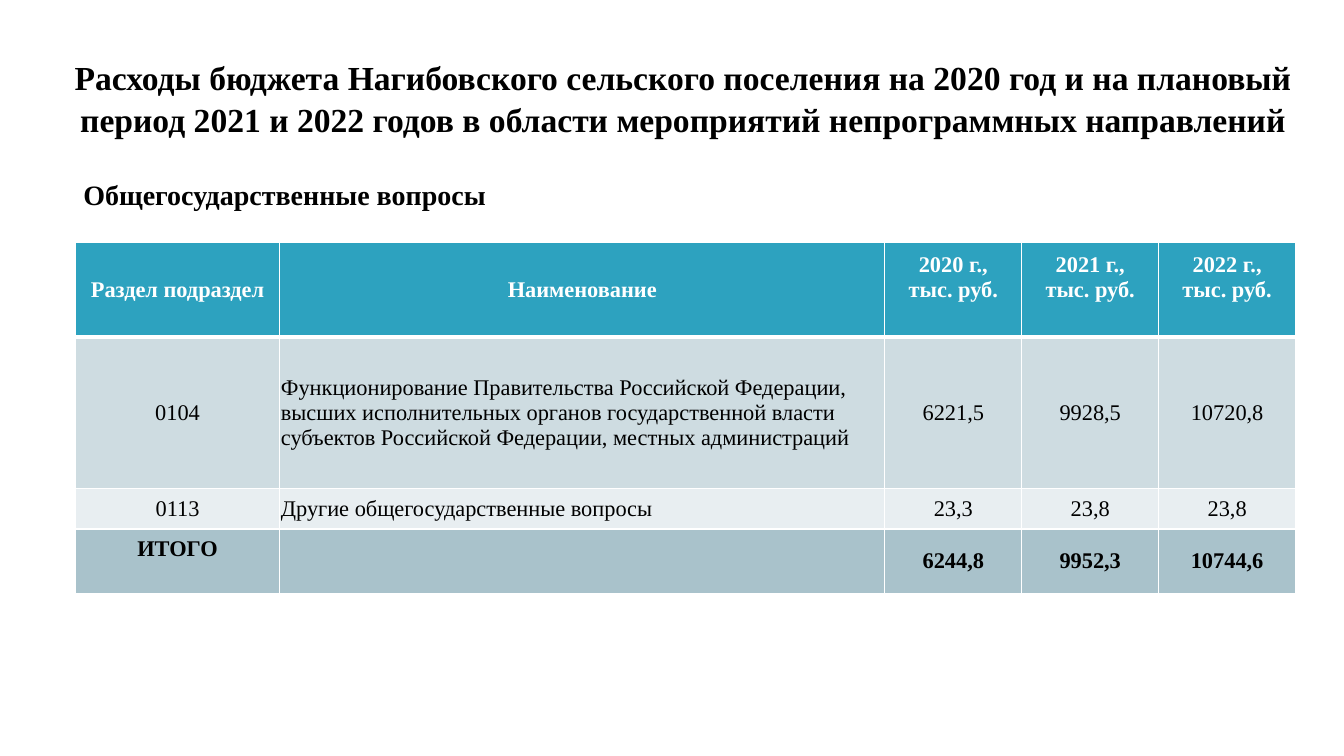
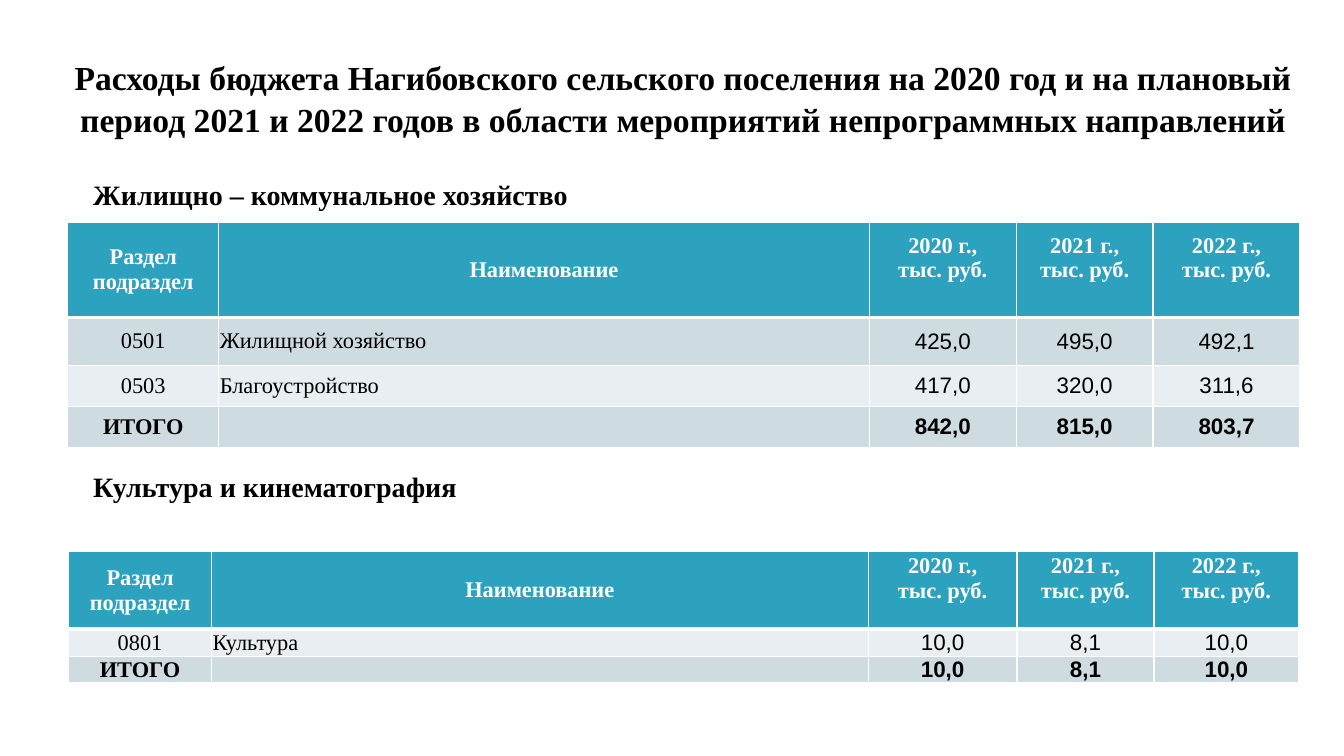
from dataclasses import dataclass

from lxml import etree
from pptx import Presentation
from pptx.dml.color import RGBColor
from pptx.enum.text import MSO_ANCHOR, PP_ALIGN
from pptx.oxml.ns import qn
from pptx.util import Cm, Pt

CENTER, LEFT = PP_ALIGN.CENTER, PP_ALIGN.LEFT
MIDDLE = MSO_ANCHOR.MIDDLE
TITLE_ONLY = 5


@dataclass(frozen=True)
class Theme:
    text: str = "000000"
    white: str = "FFFFFF"
    header: str = "2DA2BF"
    light: str = "E8EEF1"
    medium: str = "CEDCE1"
    dark: str = "A9C2CB"
    serif: str = "Times New Roman"
    sans: str = "Arial"
    title_size: int = 24
    heading_size: int = 20
    table_size: int = 16
    thin: int = 1
    thick: int = 3


THEME = Theme()

TITLE = ("Расходы бюджета Нагибовского сельского поселения на 2020 год и на плановый "
         "период 2021 и 2022 годов в области мероприятий непрограммных направлений")
HEADER = ["Раздел подраздел", "Наименование"] + [
    f"{year} г.,\nтыс. руб." for year in (2020, 2021, 2022)]
TOTAL = "ИТОГО"
LINE_GAP = 0.6  # raises a label above the middle of its cell

# Lengths are in centimetres; each heading is (text, left, top).
SLIDES = [
    [
        {
            "heading": ("Общегосударственные вопросы", 1.85, 4.35),
            "position": (1.9, 6.1),
            "columns": [5.15, 15.25, 3.45, 3.45, 3.45],
            "heights": [2.4, 3.8, 1.03, 1.62],
            "fills": [THEME.medium, THEME.light, THEME.dark],
            "number_font": THEME.serif,
            "total_gap": LINE_GAP,
            "rows": [
                ["0104", "Функционирование Правительства Российской Федерации, высших "
                 "исполнительных органов государственной власти субъектов Российской "
                 "Федерации, местных администраций", "6221,5", "9928,5", "10720,8"],
                ["0113", "Другие общегосударственные вопросы", "23,3", "23,8", "23,8"],
                [TOTAL, "", "6244,8", "9952,3", "10744,6"],
            ],
        },
    ],
    [
        {
            "heading": ("Жилищно – коммунальное хозяйство", 2.1, 4.35),
            "position": (1.71, 5.6),
            "columns": [3.8, 16.4, 3.7, 3.45, 3.7],
            "heights": [2.4, 1.2, 1.04, 1.04],
            "fills": [THEME.medium, THEME.light, THEME.medium],
            "number_font": THEME.sans,
            "total_gap": 0,
            "rows": [
                ["0501", "Жилищной хозяйство", "425,0", "495,0", "492,1"],
                ["0503", "Благоустройство", "417,0", "320,0", "311,6"],
                [TOTAL, "", "842,0", "815,0", "803,7"],
            ],
        },
        {
            "heading": ("Культура и кинематография", 2.1, 11.7),
            "position": (1.73, 13.9),
            "columns": [3.6, 16.55, 3.75, 3.45, 3.65],
            "heights": [1.9, 0.65, 0.65],
            "fills": [THEME.light, THEME.medium],
            "number_font": THEME.sans,
            "total_gap": 0,
            "rows": [
                ["0801", "Культура", "10,0", "8,1", "10,0"],
                [TOTAL, "", "10,0", "8,1", "10,0"],
            ],
        },
    ],
]


def write(text_frame, text, size, font=THEME.serif, color=THEME.text, bold=True,
          alignment=LEFT):
    text_frame.text = text
    for paragraph in text_frame.paragraphs:
        paragraph.alignment = alignment
        for run in paragraph.runs:
            run.font.name = font
            run.font.size = Pt(size)
            run.font.bold = bold
            run.font.color.rgb = RGBColor.from_string(color)
        if not paragraph.runs:
            etree.SubElement(paragraph._p, qn("a:endParaRPr"), sz=str(size * 100))


def set_borders(cell, top, bottom):
    """Draw white cell borders; the side borders are thin."""
    properties = cell._tc.get_or_add_tcPr()
    widths = {"lnL": THEME.thin, "lnR": THEME.thin, "lnT": top, "lnB": bottom}
    for index, (tag, width) in enumerate(widths.items()):
        line = etree.Element(qn(f"a:{tag}"), w=str(Pt(width)))
        fill = etree.SubElement(line, qn("a:solidFill"))
        etree.SubElement(fill, qn("a:srgbClr"), val=THEME.white)
        properties.insert(index, line)


def add_titled_slide(presentation):
    slide = presentation.slides.add_slide(presentation.slide_layouts[TITLE_ONLY])
    title = slide.shapes.title
    title.left, title.top, title.width, title.height = Cm(1.12), Cm(1.27), Cm(32.18), Cm(2.34)
    title.text_frame.vertical_anchor = MIDDLE
    write(title.text_frame, TITLE, THEME.title_size, alignment=CENTER)
    title.text_frame.paragraphs[0].line_spacing = 1.06
    return slide


def add_heading(slide, text, left, top):
    box = slide.shapes.add_textbox(Cm(left), Cm(top), Cm(20), Cm(1.1))
    box.text_frame.word_wrap = True
    write(box.text_frame, text, THEME.heading_size)


def add_budget_table(slide, budget):
    rows = [HEADER] + budget["rows"]
    fills = [THEME.header] + budget["fills"]
    columns, heights = budget["columns"], budget["heights"]
    left, top = budget["position"]
    table = slide.shapes.add_table(len(rows), len(columns), Cm(left), Cm(top),
                                   Cm(sum(columns)), Cm(sum(heights))).table
    table.horz_banding = False
    for column, width in zip(table.columns, columns):
        column.width = Cm(width)

    for row_index, values in enumerate(rows):
        table.rows[row_index].height = Cm(heights[row_index])
        is_header, is_total = row_index == 0, values[0] == TOTAL
        for column_index, value in enumerate(values):
            cell = table.cell(row_index, column_index)
            is_number = column_index >= 2
            gap = 0
            if is_header and is_number:
                gap = LINE_GAP
            elif is_total and column_index == 0:
                gap = budget["total_gap"]
            cell.margin_left = cell.margin_right = Cm(0.03)
            cell.margin_top, cell.margin_bottom = Cm(0), Cm(gap)
            cell.vertical_anchor = MIDDLE
            cell.fill.solid()
            cell.fill.fore_color.rgb = RGBColor.from_string(fills[row_index])
            set_borders(cell, THEME.thick if row_index == 1 else THEME.thin,
                        THEME.thick if is_header else THEME.thin)
            write(cell.text_frame, value, THEME.table_size,
                  font=budget["number_font"] if is_number and not is_header else THEME.serif,
                  color=THEME.white if is_header else THEME.text,
                  bold=is_header or is_total,
                  alignment=LEFT if column_index == 1 and not is_header else CENTER)


def main():
    presentation = Presentation()
    presentation.slide_width, presentation.slide_height = Cm(33.87), Cm(19.05)
    for budgets in SLIDES:
        slide = add_titled_slide(presentation)
        for budget in budgets:
            add_heading(slide, *budget["heading"])
            add_budget_table(slide, budget)
    presentation.save("out.pptx")


if __name__ == "__main__":
    main()
